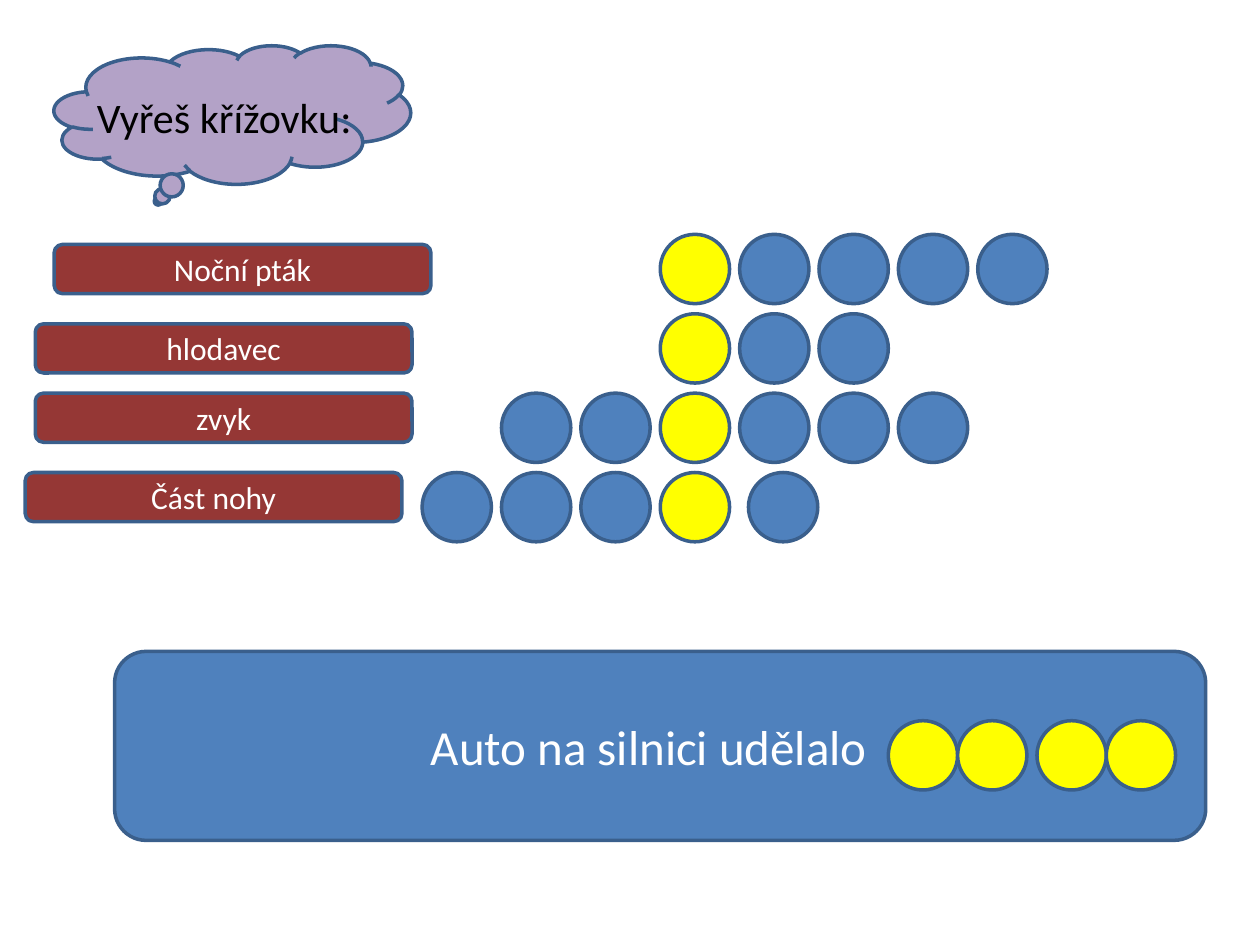
"""Build a crossword slide with four clues and a hidden word."""
from pptx import Presentation, util as u
from pptx.dml.color import RGBColor
from pptx.enum import shapes, text

BLUE, YELLOW, RED, LILAC = "4F81BD", "FFFF00", "953735", "B3A2C7"
EDGE, WHITE, BLACK = "3A5F8C", "FFFFFF", "000000"
KIND = shapes.MSO_SHAPE

TITLE = "Vyřeš křížovku:"
ANSWER = "Auto na silnici udělalo"
CLUES = [
    ("Noční pták", 0.43, 1.94),
    ("hlodavec", 0.28, 2.57),
    ("zvyk", 0.28, 3.12),
    ("Část nohy", 0.2, 3.75),
]
ROWS = [(0, 4), (0, 2), (2, 3), (3, 1)]
NUDGE = {(3, 1): 0.07}
SLOTS = [7.05, 7.6, 8.23, 8.78]
KEY, TOP, STEP, SIZE = 5.24, 1.86, 0.63, 0.55


def paint(code):
    return RGBColor.from_string(code)


def style(frame, words, size, color, align):
    frame.text = words
    frame.word_wrap = True
    line = frame.paragraphs[0]
    line.alignment = align
    font = line.runs[0].font
    font.name, font.size = "Calibri", u.Pt(size)
    font.color.rgb = paint(color)


def draw(slide, kind, box, fill, words="", size=18):
    shape = slide.shapes.add_shape(kind, *map(u.Inches, box))
    shape.shadow.inherit = False
    shape.fill.solid()
    shape.fill.fore_color.rgb = paint(fill)
    shape.line.color.rgb = paint(EDGE)
    shape.line.width = u.Pt(2)
    if words:
        frame = shape.text_frame
        style(frame, words, size, WHITE, text.PP_ALIGN.CENTER)
        frame.vertical_anchor = text.MSO_ANCHOR.MIDDLE
    return shape


def dot(slide, left, top, fill):
    draw(slide, KIND.FLOWCHART_CONNECTOR, (left, top, SIZE, SIZE), fill)


def main():
    deck = Presentation()
    deck.slide_width, deck.slide_height = u.Inches(10), u.Inches(7.5)
    slide = deck.slides.add_slide(deck.slide_layouts[6])

    draw(slide, KIND.CLOUD_CALLOUT, (0.43, 0.36, 2.83, 1.1), LILAC)
    for row, (before, after) in enumerate(ROWS):
        for col in range(-before, after + 1):
            left = KEY + col * STEP + NUDGE.get((row, col), 0)
            dot(slide, left, TOP + row * STEP, BLUE if col else YELLOW)

    for words, left, top in CLUES:
        draw(slide, KIND.ROUNDED_RECTANGLE, (left, top, 2.99, 0.39), RED, words)

    panel = draw(slide, KIND.ROUNDED_RECTANGLE, (0.91, 5.17, 8.66, 1.5),
                 BLUE, ANSWER, 28)
    panel.text_frame.margin_right = u.Inches(0.28)
    for left in SLOTS:
        dot(slide, left, 5.72, YELLOW)

    title = slide.shapes.add_textbox(*map(u.Inches, (0.67, 0.68, 6.14, 0.5)))
    style(title.text_frame, TITLE, 24, BLACK, text.PP_ALIGN.LEFT)
    title.text_frame.auto_size = text.MSO_AUTO_SIZE.SHAPE_TO_FIT_TEXT
    deck.save("out.pptx")


if __name__ == "__main__":
    main()
